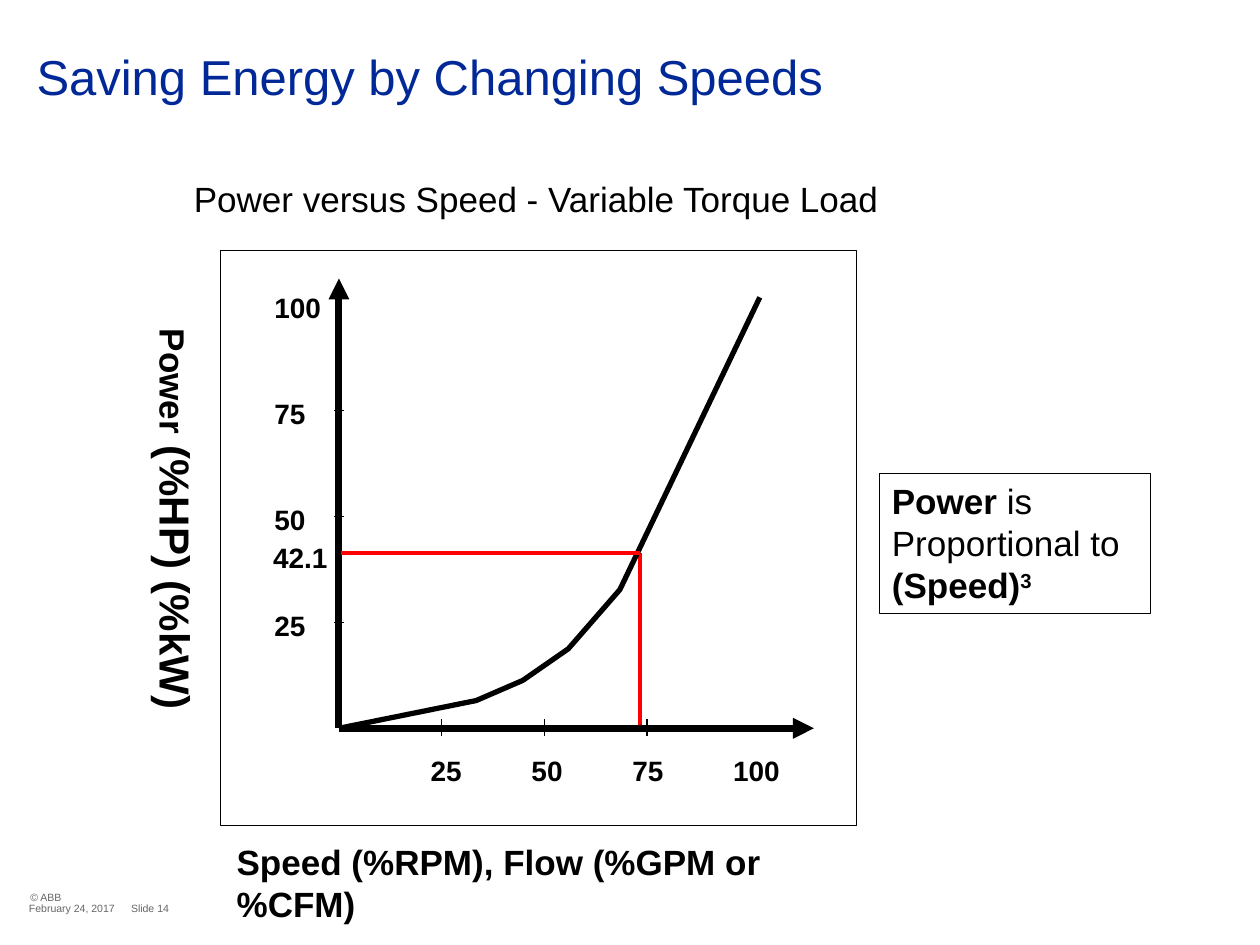
"""Build the slide on power against speed for a variable torque load."""
from dataclasses import dataclass

from lxml import etree
from pptx import Presentation
from pptx.dml.color import RGBColor
from pptx.enum.shapes import MSO_CONNECTOR, MSO_SHAPE
from pptx.enum.text import MSO_ANCHOR, MSO_AUTO_SIZE, PP_ALIGN
from pptx.oxml.ns import qn
from pptx.util import Inches, Pt

STRAIGHT = MSO_CONNECTOR.STRAIGHT
RECTANGLE = MSO_SHAPE.RECTANGLE
TOP, MIDDLE = MSO_ANCHOR.TOP, MSO_ANCHOR.MIDDLE
GROW, FIXED = MSO_AUTO_SIZE.SHAPE_TO_FIT_TEXT, MSO_AUTO_SIZE.NONE
LEFT = PP_ALIGN.LEFT

BLACK = RGBColor(0x00, 0x00, 0x00)
WHITE = RGBColor(0xFF, 0xFF, 0xFF)
RED = RGBColor(0xFF, 0x00, 0x00)
NAVY = RGBColor(0x00, 0x28, 0x97)
GREY = RGBColor(0x66, 0x66, 0x66)

FONT = "Arial"
COLUMNS = 100
SLIDE_WIDTH, SLIDE_HEIGHT = Inches(10), Inches(7.5)
CELL = SLIDE_WIDTH / COLUMNS
INSETS = (1, 0.5, 1, 0.5)
NO_INSETS = (0, 0, 0, 0)

ORIGIN_X, ORIGIN_Y = 26.9, 57.8
SPEED_STEP, POWER_STEP = 8.15, 8.4
SPEED_LABEL_STEP = 8
MARK_X, MARK_Y = 50.8, 43.9
CURVE = [(26.9, 57.8), (37.8, 55.6), (41.5, 54), (45.1, 51.5), (49.2, 46.8), (60.3, 23.6)]


@dataclass
class Run:
    """A stretch of text in one format."""
    text: str
    size: float = 16
    bold: bool = True
    color: RGBColor = BLACK
    raised: bool = False


@dataclass
class Box:
    """A text box placed in grid columns and rows."""
    left: float
    top: float
    width: float
    height: float
    runs: list[Run]
    rotation: float = 0
    insets: tuple = INSETS
    anchor: MSO_ANCHOR = TOP
    auto_size: MSO_AUTO_SIZE = GROW
    wrap: bool = True


@dataclass
class Line:
    """A straight line between two grid points."""
    x1: float
    y1: float
    x2: float
    y2: float
    width: float = 0.75
    color: RGBColor = BLACK
    arrow: bool = False


def grid(*cells: float) -> list[int]:
    """Turn grid cells into slide units."""
    return [round(cell * CELL) for cell in cells]


def fill_text(s, runs: list[Run], insets=INSETS, anchor=TOP, auto_size=GROW, wrap=True):
    """Write formatted runs into a shape and return its paragraph."""
    tf = s.text_frame
    tf.word_wrap = wrap
    tf.auto_size = auto_size
    tf.vertical_anchor = anchor
    tf.margin_left, tf.margin_top, tf.margin_right, tf.margin_bottom = grid(*insets)
    p = tf.paragraphs[0]
    p.alignment = LEFT
    for run in runs:
        r = p.add_run()
        r.text = run.text
        r.font.name, r.font.size, r.font.bold = FONT, Pt(run.size), run.bold
        r.font.color.rgb = run.color
        if run.raised:
            r.font._element.set("baseline", "30000")
    return p


def draw_box(slide, box: Box) -> None:
    """Draw a text box."""
    s = slide.shapes.add_textbox(*grid(box.left, box.top, box.width, box.height))
    s.rotation = box.rotation
    fill_text(s, box.runs, box.insets, box.anchor, box.auto_size, box.wrap)


def draw_line(slide, line: Line) -> None:
    """Draw a line, with an arrowhead at its end if asked for."""
    s = slide.shapes.add_connector(STRAIGHT, *grid(line.x1, line.y1, line.x2, line.y2))
    s.line.color.rgb, s.line.width = line.color, Pt(line.width)
    properties = s._element.spPr
    if line.arrow:
        etree.SubElement(properties.find(qn("a:ln")), qn("a:tailEnd"), type="triangle")
    etree.SubElement(properties, qn("a:effectLst"))


def draw_rectangle(slide, left: float, top: float, width: float, height: float):
    """Draw a white rectangle with a thin black outline."""
    s = slide.shapes.add_shape(RECTANGLE, *grid(left, top, width, height))
    s.shadow.inherit = False
    s.fill.solid()
    s.fill.fore_color.rgb = WHITE
    s.line.color.rgb, s.line.width = BLACK, Pt(0.75)
    return s


def draw_curve(slide) -> None:
    """Draw the power curve."""
    start, *rest = [grid(*point) for point in CURVE]
    builder = slide.shapes.build_freeform(*start)
    builder.add_line_segments(rest, close=False)
    s = builder.convert_to_shape()
    s.shadow.inherit = False
    s.fill.background()
    s.line.color.rgb, s.line.width = BLACK, Pt(3)


def draw_axes(slide) -> None:
    """Draw the axes with their ticks and labels."""
    draw_line(slide, Line(ORIGIN_X, ORIGIN_Y, ORIGIN_X, 22.1, 4, arrow=True))
    draw_line(slide, Line(ORIGIN_X, ORIGIN_Y, 64.6, ORIGIN_Y, 4, arrow=True))
    for step in range(1, 5):
        x = ORIGIN_X + step * SPEED_STEP
        y = ORIGIN_Y - step * POWER_STEP
        runs = [Run(str(25 * step))]
        draw_box(slide, Box(20.8, y - 1.6, 6.6, 3.7, runs))
        draw_box(slide, Box(25.2 + step * SPEED_LABEL_STEP, 59.3, 6.6, 3.7, runs))
        if step < 4:
            draw_line(slide, Line(26.5, y, 27.3, y))
            draw_line(slide, Line(x, 57.1, x, 58.4))


def draw_title(slide) -> None:
    """Place and format the title."""
    s = slide.shapes.title
    s.left, s.top, s.width, s.height = grid(0.9, 0.8, 99.1, 16.1)
    runs = [Run("Saving Energy by Changing Speeds", 28, False, NAVY)]
    p = fill_text(s, runs, (2, 3.4, 2.4, 0), auto_size=FIXED)
    p.line_spacing = 0.9


def draw_footer(slide) -> None:
    """Draw the copyright, date and slide number."""
    for left, top, width, text, anchor, wrap in (
        (2.4, 70.7, 12.2, "© ABB", TOP, False),
        (10.4, 71.5, 5.3, "Slide 14", MIDDLE, True),
        (2.3, 71.5, 7.9, "February 24, 2017", MIDDLE, True),
    ):
        runs = [Run(text, 6, False, GREY)]
        draw_box(slide, Box(left, top, width, 1.1, runs, 0, NO_INSETS, anchor, FIXED, wrap))


def main() -> None:
    """Build and save the slide."""
    prs = Presentation()
    prs.slide_width, prs.slide_height = SLIDE_WIDTH, SLIDE_HEIGHT
    slide = prs.slides.add_slide(prs.slide_layouts[5])
    draw_footer(slide)
    draw_title(slide)
    formula = draw_rectangle(slide, 69.8, 37.6, 21.5, 11.1)
    fill_text(formula, [Run("Power", 20), Run(" is Proportional to ", 20, False),
                        Run("(Speed)", 20), Run("3", 20, raised=True)])
    draw_rectangle(slide, 17.5, 19.9, 50.5, 45.6)
    draw_line(slide, Line(MARK_X, MARK_Y, MARK_X, ORIGIN_Y, 2, RED))
    draw_curve(slide)
    draw_axes(slide)
    draw_line(slide, Line(27.1, MARK_Y, MARK_X, MARK_Y, 2, RED))
    for box in (
        Box(20.7, 42.4, 6.6, 3.7, [Run("42.1")]),
        Box(17.8, 66.2, 50.6, 7.7, [Run("Speed (%RPM), Flow (%GPM or %CFM)", 20)]),
        Box(-5.7, 42.2, 39.3, 5.1, [Run("Power", 20), Run(" (%HP) (%kW)", 24)], 90),
        Box(14.4, 13.6, 57, 4.3, [Run("Power versus Speed - Variable Torque Load", 20, False)]),
    ):
        draw_box(slide, box)
    prs.save("out.pptx")


if __name__ == "__main__":
    main()
